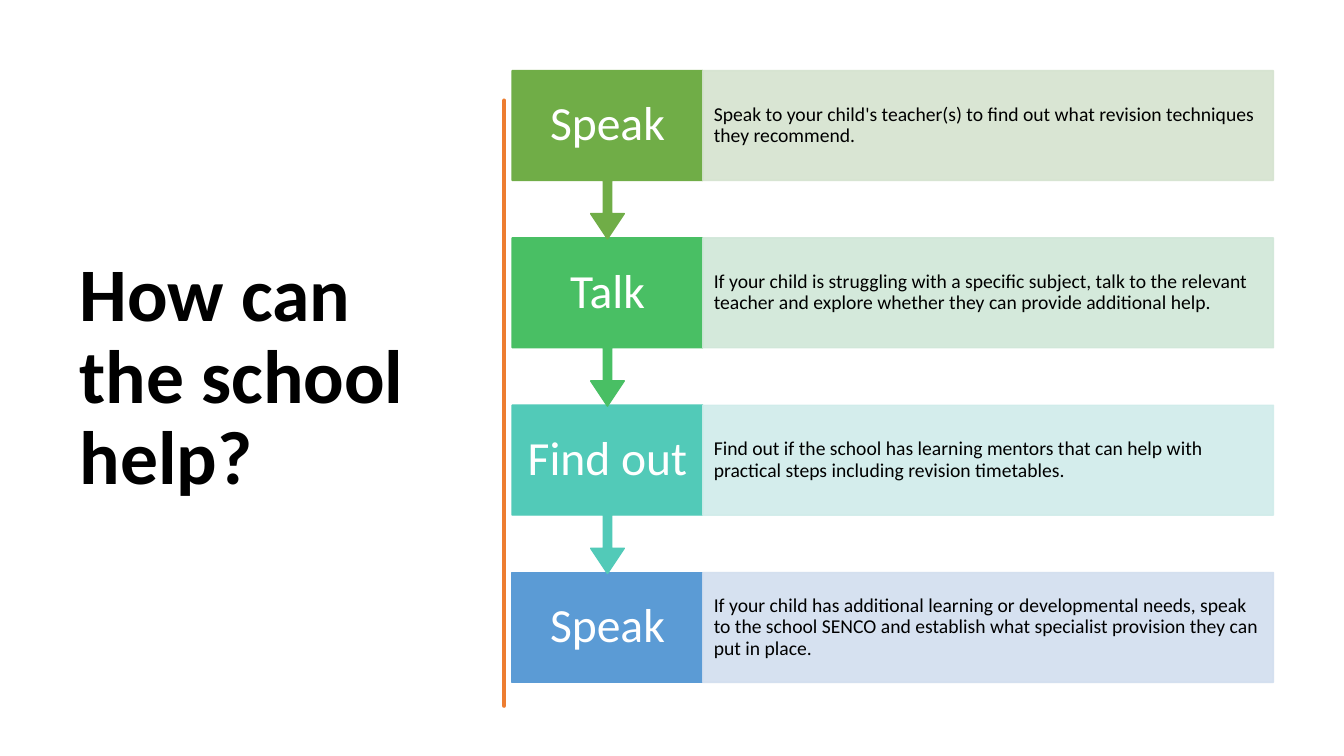
from dataclasses import dataclass

from lxml import etree
from pptx import Presentation
from pptx import util as u
from pptx.dml.color import RGBColor
from pptx.enum import shapes, text
from pptx.oxml.ns import qn


@dataclass(frozen=True)
class Theme:
    font: str = "Calibri"
    ink: str = "000000"
    paper: str = "FFFFFF"
    divider: str = "ED7D31"
    title_size: int = 54
    label_size: int = 34
    body_size: int = 14
    panel_alpha: int = 90


# Heading, description, label colour, panel colour
STEPS = [
    ("Speak", "Speak to your child's teacher(s) to find out what revision "
     "techniques they recommend.", "70AD47", "D5E3CF"),
    ("Talk", "If your child is struggling with a specific subject, talk to the "
     "relevant teacher and explore whether they can provide additional help.",
     "49BF64", "D0E7D8"),
    ("Find out", "Find out if the school has learning mentors that can help with "
     "practical steps including revision timetables.", "52CAB8", "D0ECEA"),
    ("Speak", "If your child has additional learning or developmental needs, speak "
     "to the school SENCO and establish what specialist provision they can put in "
     "place.", "5B9BD5", "D2DEEF"),
]

# Hand-drawn divider: start point, then cubic curves (two controls and an end)
DIVIDER_START = (4.75, 0.84)
DIVIDER_CURVES = [
    ((4.77, 1.02), (4.77, 1.19), (4.75, 1.46)),
    ((4.73, 1.73), (4.76, 1.95), (4.75, 2.26)),
    ((4.74, 2.57), (4.75, 2.62), (4.75, 2.94)),
    ((4.74, 3.25), (4.77, 3.42), (4.75, 3.56)),
    ((4.73, 3.70), (4.79, 4.14), (4.75, 4.36)),
    ((4.71, 4.57), (4.72, 4.84), (4.75, 5.10)),
    ((4.77, 5.36), (4.77, 5.64), (4.75, 5.84)),
    ((4.73, 6.03), (4.76, 6.50), (4.75, 6.76)),
    ((4.74, 6.76), (4.73, 6.76), (4.73, 6.76)),
    ((4.74, 6.46), (4.71, 6.44), (4.73, 6.13)),
    ((4.74, 5.83), (4.74, 5.70), (4.73, 5.57)),
    ((4.72, 5.44), (4.72, 4.95), (4.73, 4.77)),
    ((4.73, 4.59), (4.71, 4.45), (4.73, 4.15)),
    ((4.74, 3.86), (4.72, 3.73), (4.73, 3.35)),
    ((4.74, 2.98), (4.72, 2.81), (4.73, 2.50)),
    ((4.74, 2.18), (4.75, 2.00), (4.73, 1.81)),
    ((4.70, 1.63), (4.77, 1.04), (4.73, 0.84)),
]


def curve_points(start, curves, steps=6):
    """Sample points along a chain of cubic curves."""
    points = []
    for c1, c2, end in curves:
        for i in range(1, steps + 1):
            t = i / steps
            weights = ((1 - t) ** 3, 3 * t * (1 - t) ** 2, 3 * t * t * (1 - t), t ** 3)
            points.append(tuple(sum(w * pt[axis] for w, pt in
                                    zip(weights, (start, c1, c2, end)))
                                for axis in (0, 1)))
        start = end
    return points


class SlideBuilder:
    def __init__(self, prs, theme):
        self.theme = theme
        self.slide = prs.slides.add_slide(prs.slide_layouts[5])

    def paint(self, sp, color, width=1, alpha=100):
        sp.shadow.inherit = False
        sp.line.width = u.Pt(width)
        for fill in (sp.fill, sp.line.fill):
            fill.solid()
            fill.fore_color.rgb = RGBColor.from_string(color)
        if alpha < 100:
            for clr in sp._element.spPr.iter(qn("a:srgbClr")):
                etree.SubElement(clr, qn("a:alpha"), val=str(alpha * 1000))

    def set_words(self, sp, words, size, color, align, bold=False, inset=0.1):
        tf = sp.text_frame
        tf.text = words
        tf.word_wrap = True
        tf.auto_size = text.MSO_AUTO_SIZE.NONE
        tf.vertical_anchor = text.MSO_ANCHOR.MIDDLE
        tf.margin_left = tf.margin_right = u.Inches(inset)
        p = tf.paragraphs[0]
        p.alignment = align
        p.line_spacing = 0.9
        font = p.runs[0].font
        font.name, font.size, font.bold = self.theme.font, u.Pt(size), bold
        font.color.rgb = RGBColor.from_string(color)

    def title(self, words, left, top, width, height):
        sp = self.slide.shapes.title
        sp.left, sp.top = u.Inches(left), u.Inches(top)
        sp.width, sp.height = u.Inches(width), u.Inches(height)
        self.set_words(sp, words, self.theme.title_size, self.theme.ink,
                       text.PP_ALIGN.LEFT, bold=True)

    def box(self, kind, left, top, width, height, color, alpha=100):
        sp = self.slide.shapes.add_shape(kind, u.Inches(left), u.Inches(top),
                                         u.Inches(width), u.Inches(height))
        self.paint(sp, color, alpha=alpha)
        return sp

    def label(self, words, left, top, width, height, color, arrow_height=0):
        if arrow_height:
            total = height + arrow_height
            sp = self.box(shapes.MSO_SHAPE.DOWN_ARROW_CALLOUT, left, top, width,
                          total, color)
            for i, value in enumerate((0.05, 0.1, 0.15, height / total)):
                sp.adjustments[i] = value
        else:
            sp = self.box(shapes.MSO_SHAPE.RECTANGLE, left, top, width, height, color)
        self.set_words(sp, words, self.theme.label_size, self.theme.paper,
                       text.PP_ALIGN.CENTER)

    def panel(self, words, left, top, width, height, color):
        sp = self.box(shapes.MSO_SHAPE.RECTANGLE, left, top, width, height, color,
                      self.theme.panel_alpha)
        self.set_words(sp, words, self.theme.body_size, self.theme.ink,
                       text.PP_ALIGN.LEFT, inset=0.11)

    def divider(self, start, curves):
        builder = self.slide.shapes.build_freeform(*start, scale=u.Inches(1))
        builder.add_line_segments(curve_points(start, curves), close=True)
        sp = builder.convert_to_shape()
        self.paint(sp, self.theme.divider, width=3.25)
        etree.SubElement(sp._element.spPr.find(qn("a:ln")), qn("a:round"))


def main():
    prs = Presentation()
    prs.slide_width, prs.slide_height = u.Inches(13.33), u.Inches(7.5)
    s = SlideBuilder(prs, Theme())

    # Title and divider
    s.title("How can the school help?", 0.69, 0.7, 3.74, 6.11)
    s.divider(DIVIDER_START, DIVIDER_CURVES)

    # Steps, last one first so that each arrow tip lies over the next box
    top, pitch, height = 0.7, 1.66, 1.09
    left, label_width, panel_width = 5.08, 1.89, 5.66
    last = len(STEPS) - 1
    for i, (heading, words, color, tint) in reversed(list(enumerate(STEPS))):
        y = top + i * pitch
        s.label(heading, left, y, label_width, height, color,
                arrow_height=0.58 if i < last else 0)
        s.panel(words, left + label_width, y, panel_width, height, tint)

    prs.save("out.pptx")


if __name__ == "__main__":
    main()
